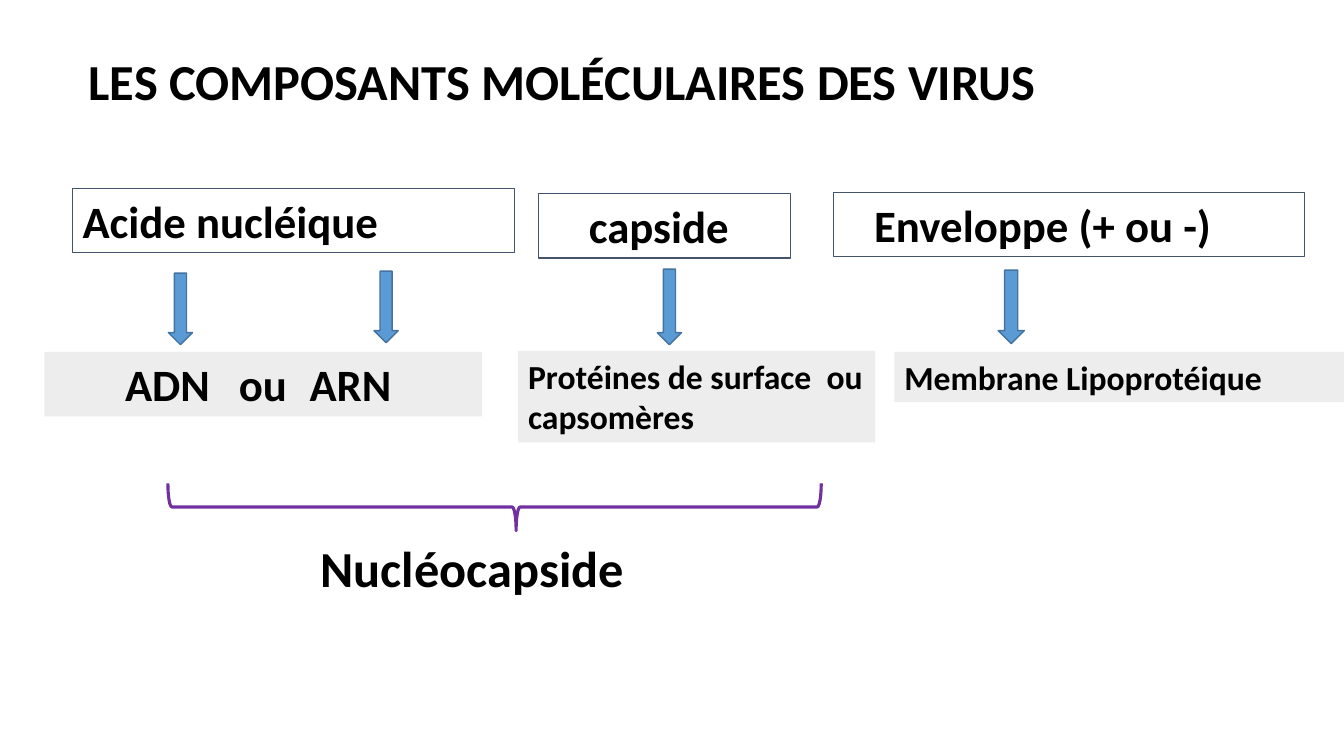
from pptx import Presentation
from pptx.dml.color import RGBColor
from pptx.enum.shapes import MSO_SHAPE
from pptx.enum.text import MSO_ANCHOR, MSO_AUTO_SIZE, PP_ALIGN
from pptx.oxml import parse_xml
from pptx.oxml.ns import nsdecls
from pptx.util import Inches, Pt

RECT, BRACE, ARROW = MSO_SHAPE.RECTANGLE, MSO_SHAPE.RIGHT_BRACE, MSO_SHAPE.DOWN_ARROW
TOP, LEFT, NO_FIT = MSO_ANCHOR.TOP, PP_ALIGN.LEFT, MSO_AUTO_SIZE.NONE
FONT = "Calibri"
COLORS = {"text": "000000", "frame": "44546A", "panel": "EDEDED",
          "arrow": "5B9BD5", "arrow_line": "43739E", "brace": "7030A0"}


class Board:
    """Style and current slide."""

    def __init__(self, slide):
        self.slide = slide

    def color(self, name):
        return RGBColor.from_string(COLORS[name])

    def set_text(self, sp, text, size, indent=0.1, tabs=()):
        tf = sp.text_frame
        tf.text = text
        tf.word_wrap, tf.auto_size, tf.vertical_anchor = True, NO_FIT, TOP
        tf.margin_left, tf.margin_right = Inches(indent), Inches(0.1)
        tf.margin_top = tf.margin_bottom = Inches(0.05)
        p = tf.paragraphs[0]
        p.alignment, p.line_spacing, p.space_before = LEFT, 1.0, Pt(0)
        if tabs:
            stops = "".join(f'<a:tab pos="{Inches(t)}" algn="l"/>' for t in tabs)
            p._p.get_or_add_pPr().append(
                parse_xml(f'<a:tabLst {nsdecls("a")}>{stops}</a:tabLst>'))
        for r in p.runs:
            r.font.name, r.font.size, r.font.bold = FONT, Pt(size), True
            r.font.color.rgb = self.color("text")

    def title(self, text, box, size):
        sp = self.slide.shapes.title
        sp.left, sp.top, sp.width, sp.height = map(Inches, box)
        self.set_text(sp, text, size)

    def shape(self, kind, box, fill=None, line=None, weight=0.75):
        sp = self.slide.shapes.add_shape(kind, *map(Inches, box))
        sp.shadow.inherit = False
        if fill:
            sp.fill.solid()
            sp.fill.fore_color.rgb = self.color(fill)
        else:
            sp.fill.background()
        if line:
            sp.line.color.rgb = self.color(line)
            sp.line.width = Pt(weight)
        else:
            sp.line.fill.background()
        return sp

    def box(self, text, box, size, indent=0.1, tabs=(), **style):
        self.set_text(self.shape(RECT, box, **style), text, size, indent, tabs)

    def label(self, text, box, size, indent):
        sp = self.slide.shapes.add_textbox(*map(Inches, box))
        self.set_text(sp, text, size, indent)

    def arrow(self, box):
        self.shape(ARROW, box, "arrow", "arrow_line", 1)

    def brace(self, box, curve, tip):
        sp = self.shape(BRACE, box, line="brace", weight=2.25)
        sp.rotation = 90
        sp.adjustments[0], sp.adjustments[1] = curve, tip


def main():
    prs = Presentation()
    prs.slide_width, prs.slide_height = Inches(13.33), Inches(7.5)
    s = Board(prs.slides.add_slide(prs.slide_layouts[5]))

    s.title("LES COMPOSANTS MOLÉCULAIRES DES VIRUS", (0.78, 0.45, 11.05, 0.71), 36)

    # Components: framed boxes
    for text, box, indent in (
            ("Acide nucléique", (0.72, 1.87, 4.38, 0.64), 0.1),
            ("capside", (5.34, 1.92, 2.5, 0.64), 0.5),
            ("Enveloppe (+ ou -)", (8.27, 1.91, 4.67, 0.64), 0.4)):
        s.box(text, box, 32, indent, line="frame")

    # What each component is made of: grey panels
    for text, box, size, indent, tabs in (
            ("ADN\tou\tARN", (0.44, 3.49, 4.34, 0.64), 32, 0.8, (1.13, 1.83)),
            ("Protéines de surface  ou capsomères",
             (5.14, 3.48, 3.54, 0.91), 24, 0.1, ()),
            ("Membrane Lipoprotéique", (8.87, 3.49, 4.68, 0.5), 24, 0.1, ())):
        s.box(text, box, size, indent, tabs, fill="panel")

    # Nucleocapsid: brace and its label
    s.brace((4.67, 1.79, 0.47, 6.48), 0.083, 0.467)
    s.label("Nucléocapside", (2.06, 5.28, 5.47, 0.71), 36, 1.12)

    # Arrows from components to panels
    for box in ((6.52, 2.67, 0.24, 0.75), (9.9, 2.68, 0.26, 0.73),
                (3.71, 2.69, 0.24, 0.71), (1.67, 2.71, 0.24, 0.71)):
        s.arrow(box)

    prs.save("out.pptx")


if __name__ == "__main__":
    main()
